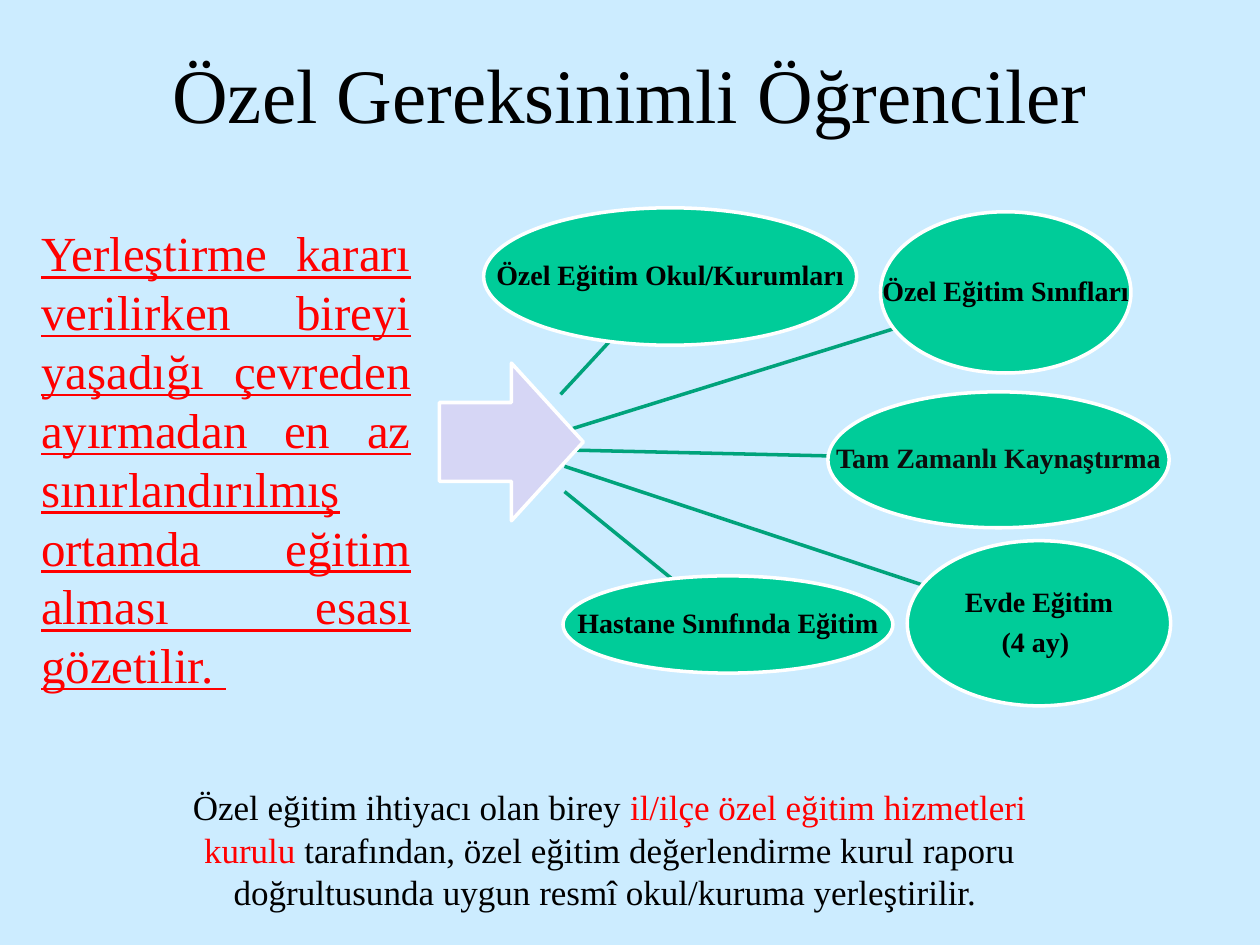
import pptx
import pptx.dml.color
import pptx.enum.shapes
import pptx.enum.text
import pptx.oxml.ns
import pptx.util
from lxml import etree

Cm, Pt = pptx.util.Cm, pptx.util.Pt
ALIGN = pptx.enum.text.PP_ALIGN
ANCHOR = pptx.enum.text.MSO_ANCHOR
SHAPE = pptx.enum.shapes.MSO_SHAPE

FONT = "Times New Roman"
BLACK, NEAR_BLACK, RED, WHITE = "000000", "0D0D0D", "FF0000", "FFFFFF"
SKY, GREEN, DARK_GREEN, LILAC = "CCECFF", "00CC99", "00A37B", "D6D6F5"

# Placement options: left, top, width, height in cm, paragraphs, text colour
OPTIONS = [
    (9.75, 4.19, 7.52, 2.77, ["Özel Eğitim Okul/Kurumları"], BLACK),
    (17.75, 4.27, 5.05, 3.25, ["Özel Eğitim Sınıfları"], BLACK),
    (16.69, 7.9, 6.88, 2.74, ["Tam Zamanlı Kaynaştırma"], NEAR_BLACK),
    (18.29, 10.9, 5.31, 3.33, ["Evde Eğitim", "(4 ay) "], BLACK),
    (11.35, 11.61, 6.65, 1.96, ["Hastane Sınıfında Eğitim"], BLACK),
]

# Spokes from the arrow to the options: start x, y, end x, y in cm
SPOKES = [
    (11.38, 9.91, 13.56, 11.68),
    (11.38, 9.4, 18.59, 11.79),
    (11.38, 9.07, 16.69, 9.19),
    (11.38, 8.69, 18.01, 6.63),
    (11.3, 7.95, 12.29, 6.88),
]


def paint(color_format, hex_color):
    color_format.rgb = pptx.dml.color.RGBColor.from_string(hex_color)


def add_run(paragraph, text, size, color, bold=False, underline=False):
    run = paragraph.add_run()
    run.text = text
    run.font.name = FONT
    run.font.size = Pt(size)
    run.font.bold = bold
    run.font.underline = underline
    paint(run.font.color, color)


def add_text(slide, box, runs, size, align, anchor=ANCHOR.TOP, underline=False):
    frame = slide.shapes.add_textbox(*map(Cm, box)).text_frame
    frame.word_wrap = True
    frame.vertical_anchor = anchor
    paragraph = frame.paragraphs[0]
    paragraph.alignment = align
    for text, color in runs:
        add_run(paragraph, text, size, color, underline=underline)


def add_outlined_shape(slide, kind, box, fill):
    shape = slide.shapes.add_shape(kind, *map(Cm, box))
    shape.shadow.inherit = False
    shape.fill.solid()
    paint(shape.fill.fore_color, fill)
    paint(shape.line.color, WHITE)
    shape.line.width = Pt(2)
    return shape


def add_option(slide, box, lines, color):
    frame = add_outlined_shape(slide, SHAPE.OVAL, box, GREEN).text_frame
    frame.word_wrap = False
    frame.vertical_anchor = ANCHOR.MIDDLE
    frame.margin_left = frame.margin_right = Cm(0.03)
    frame.margin_top = frame.margin_bottom = Cm(0.03)
    for index, line in enumerate(lines):
        paragraph = frame.add_paragraph() if index else frame.paragraphs[0]
        paragraph.alignment = ALIGN.CENTER
        paragraph.line_spacing = 0.9
        paragraph.space_after = Pt(5.6)
        add_run(paragraph, line, 16, color, bold=True)


def add_spoke(slide, ends):
    spoke = slide.shapes.add_connector(
        pptx.enum.shapes.MSO_CONNECTOR.STRAIGHT, *map(Cm, ends))
    paint(spoke.line.color, DARK_GREEN)
    spoke.line.width = Pt(2)
    etree.SubElement(spoke._element.spPr, pptx.oxml.ns.qn("a:effectLst"))


def main():
    deck = pptx.Presentation()
    deck.slide_width, deck.slide_height = Cm(25.4), Cm(19.05)
    slide = deck.slides.add_slide(deck.slide_layouts[6])
    slide.background.fill.solid()
    paint(slide.background.fill.fore_color, SKY)

    # Title
    add_text(slide, (1.91, 0.58, 21.59, 2.59),
             [("Özel Gereksinimli Öğrenciler", BLACK)],
             44, ALIGN.CENTER, ANCHOR.MIDDLE)

    # Diagram: spokes lie behind the arrow and the options
    for ends in SPOKES:
        add_spoke(slide, ends)
    add_outlined_shape(slide, SHAPE.RIGHT_ARROW, (8.86, 7.32, 2.9, 3.18), LILAC)
    for *box, lines, color in OPTIONS:
        add_option(slide, box, lines, color)

    # Who decides on the placement
    add_text(slide, (2.97, 15.72, 18.64, 2.82), [
        ("Özel eğitim ihtiyacı olan birey", BLACK),
        (" il/ilçe özel eğitim hizmetleri kurulu", RED),
        (" tarafından, özel eğitim değerlendirme kurul raporu doğrultusunda "
         "uygun resmî okul/kuruma yerleştirilir. ", BLACK),
    ], 20, ALIGN.CENTER)

    # Placement principle
    add_text(slide, (0.58, 4.37, 7.95, 9.83), [
        ("Yerleştirme kararı verilirken bireyi yaşadığı çevreden ayırmadan "
         "en az sınırlandırılmış ortamda eğitim alması esası gözetilir. ", RED),
    ], 28, ALIGN.JUSTIFY, underline=True)

    deck.save("out.pptx")


if __name__ == "__main__":
    main()
